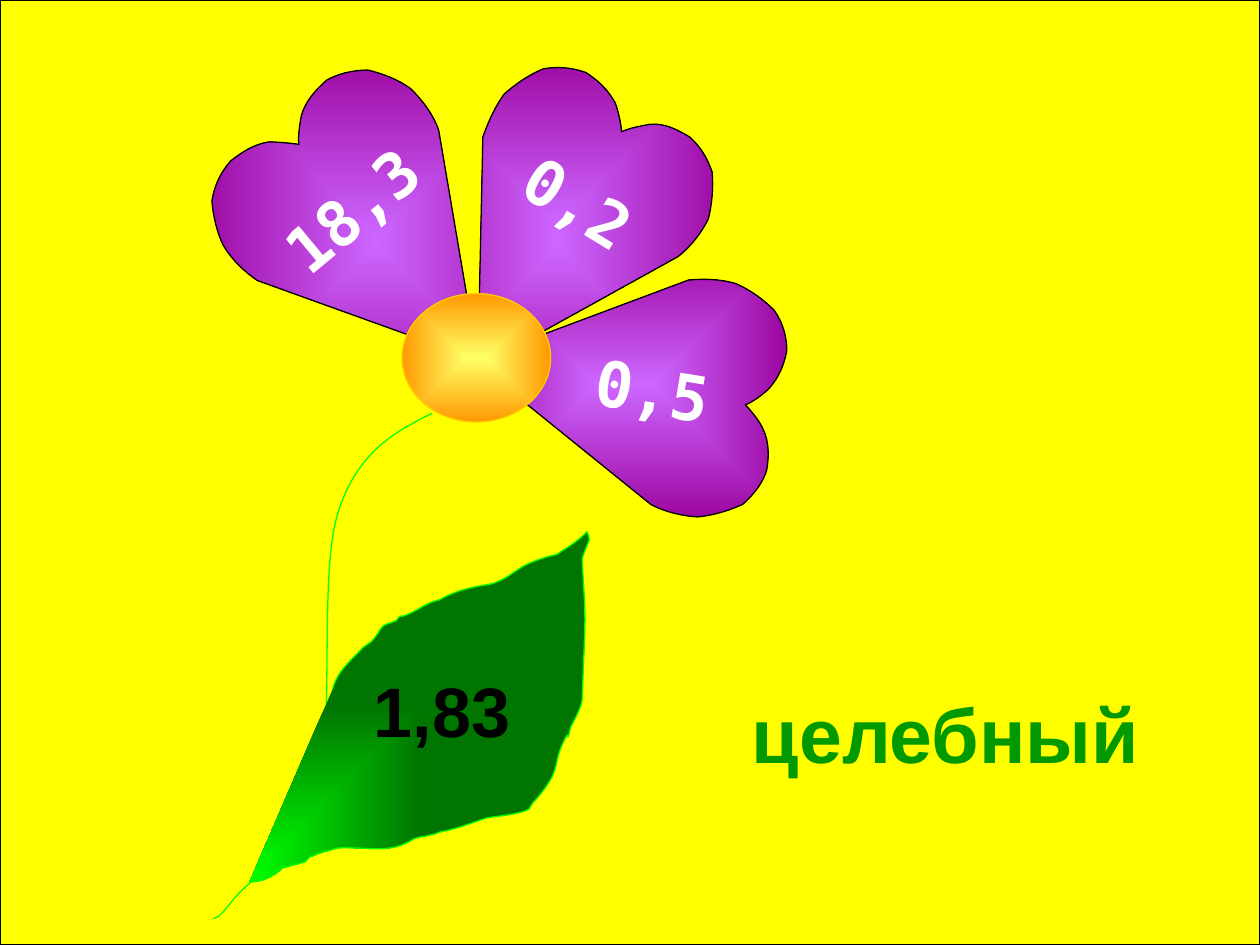
from dataclasses import dataclass
from math import cos, radians, sin
from typing import Optional

from lxml.etree import SubElement
from pptx import Presentation
from pptx.dml.color import RGBColor
from pptx.enum.shapes import MSO_SHAPE
from pptx.enum.text import MSO_ANCHOR, PP_ALIGN
from pptx.oxml.ns import qn
from pptx.util import Inches, Pt

COLS, ROWS = 1000, 750
W, H = Inches(10), Inches(7.5)
CELL = W // COLS

BLACK = RGBColor(0x00, 0x00, 0x00)
WHITE = RGBColor(0xFF, 0xFF, 0xFF)
YELLOW = RGBColor(0xFF, 0xFF, 0x00)
LIME = RGBColor(0x00, 0xFF, 0x00)
LEAF_GREEN = RGBColor(0x00, 0x76, 0x00)
WORD_GREEN = RGBColor(0x00, 0x99, 0x00)
LILAC = RGBColor(0xCC, 0x66, 0xFF)
PURPLE = RGBColor(0x99, 0x00, 0x99)
LEMON = RGBColor(0xFF, 0xFF, 0x66)
ORANGE = RGBColor(0xFF, 0x99, 0x00)
GOLD = RGBColor(0xFF, 0xCC, 0x00)

CENTRE = (50, 50, 50, 50)
BOTTOM_LEFT = (0, 100, 100, 0)


@dataclass(frozen=True)
class Outline:
    start: tuple
    segments: tuple
    closed: bool = False


@dataclass(frozen=True)
class Petal:
    text: str
    centre: tuple
    angle: float
    text_share: int
    outline: Outline
    vert: Optional[str] = None


STEM = Outline((343, 328), (
    (313, 343, 283, 359, 268, 408), (253, 458, 266, 574, 252, 625),
    (238, 676, 200, 696, 186, 713), (172, 731, 172, 728, 169, 729)))

LEAF = Outline((264, 547), (
    (268, 532, 278, 525, 288, 514), (290, 512, 293, 511, 295, 509),
    (305, 498, 299, 497, 314, 493), (322, 484, 312, 493, 325, 487),
    (336, 482, 337, 479, 349, 476), (359, 470, 370, 467, 381, 465),
    (386, 464, 390, 464, 394, 462), (402, 459, 409, 453, 416, 449),
    (424, 445, 433, 442, 442, 440), (451, 434, 458, 430, 466, 422),
    (469, 431, 468, 426, 464, 438), (463, 440, 462, 444, 462, 444),
    (465, 496, 465, 480, 462, 556), (461, 563, 453, 577, 453, 577),
    (448, 597, 455, 570, 445, 594), (442, 601, 442, 609, 438, 617),
    (434, 624, 429, 631, 423, 637), (422, 638, 421, 641, 420, 642),
    (415, 646, 393, 648, 387, 649), (374, 653, 363, 658, 350, 660),
    (346, 662, 341, 663, 336, 664), (333, 664, 328, 666, 328, 666),
    (310, 678, 294, 672, 268, 673), (255, 677, 260, 675, 251, 678),
    (250, 679, 246, 680, 246, 680), (240, 686, 245, 683, 235, 686),
    (231, 687, 224, 689, 224, 689), (217, 696, 208, 700, 198, 700)))

PETALS = (
    Petal("0,2", (442, 187), 31.4, 74, Outline((493, 105), (
        (493, 99, 490, 87, 488, 82), (482, 71, 474, 64, 465, 58),
        (454, 54, 443, 53, 431, 55), (419, 60, 409, 67, 400, 75),
        (392, 86, 387, 98, 383, 109), (379, 292), (538, 204),
        (548, 196, 556, 186, 562, 174), (565, 162, 566, 149, 565, 137),
        (561, 125, 555, 116, 547, 109), (537, 103, 527, 98, 516, 99),
        (510, 100, 499, 102, 493, 105)), True)),
    Petal("18,3", (300, 191.5), 320.2, 74, Outline((237, 115), (
        (231, 114, 219, 113, 213, 113), (201, 115, 192, 121, 183, 128),
        (175, 137, 170, 147, 168, 160), (169, 172, 172, 185, 177, 195),
        (184, 207, 194, 216, 204, 223), (379, 286), (348, 104),
        (344, 92, 336, 81, 326, 71), (317, 64, 304, 59, 292, 56),
        (279, 56, 268, 59, 259, 64), (250, 72, 242, 81, 239, 92),
        (238, 97, 236, 109, 237, 115)), True)),
    Petal("0,5", (496.5, 305.5), 99.4, 82, Outline((592, 321), (
        (598, 319, 607, 312, 611, 308), (619, 299, 623, 289, 625, 278),
        (625, 267, 622, 256, 615, 246), (606, 237, 596, 230, 585, 225),
        (572, 221, 559, 221, 547, 222), (376, 286), (517, 400),
        (528, 406, 541, 409, 554, 410), (566, 409, 579, 405, 590, 400),
        (599, 392, 606, 383, 609, 373), (611, 362, 611, 350, 606, 340),
        (604, 335, 597, 326, 592, 321)), True), "vert270"),
)


def cells(*values: float) -> list:
    return [round(v * CELL) for v in values]


def turn_back(x: float, y: float, centre: tuple, angle: float) -> tuple:
    a, dx, dy = radians(angle), x - centre[0], y - centre[1]
    return (centre[0] + dx * cos(a) + dy * sin(a),
            centre[1] - dx * sin(a) + dy * cos(a))


def style(sp, line: RGBColor) -> None:
    sp.shadow.inherit = False
    sp.line.color.rgb = line
    sp.line.width = Pt(0.75)


def fill_gradient(sp, inner: RGBColor, outer: RGBColor, kind: str, focus: tuple) -> None:
    sp.fill.gradient()
    for stop, color, position in zip(sp.fill.gradient_stops, (inner, outer), (0, 1)):
        stop.color.rgb = color
        stop.position = position
    grad = sp.element.spPr.find(qn("a:gradFill"))
    grad.set("rotWithShape", "0")
    grad.remove(grad.find(qn("a:lin")))
    path = SubElement(grad, qn("a:path"), {"path": kind})
    SubElement(path, qn("a:fillToRect"),
               {side: str(share * 1000) for side, share in zip("ltrb", focus)})


def draw_outline(s, outline: Outline, line: RGBColor, centre: tuple = (0, 0),
                 angle: float = 0):
    points = [outline.start]
    for seg in outline.segments:
        points += zip(seg[::2], seg[1::2])
    first, *rest = [cells(*turn_back(x, y, centre, angle)) for x, y in points]
    builder = s.shapes.build_freeform(*first, scale=1.0)
    builder.add_line_segments(rest, close=outline.closed)
    sp = builder.convert_to_shape()
    path = next(sp.element.iter(qn("a:path")))
    steps = iter(path.findall(qn("a:lnTo")))
    for seg in outline.segments:
        step = next(steps)
        if len(seg) == 6:
            curve = SubElement(path, qn("a:cubicBezTo"))
            step.addprevious(curve)
            for part in (step, next(steps), next(steps)):
                curve.append(part[0])
                path.remove(part)
    sp.rotation = angle
    style(sp, line)
    return sp


def write(tf, text: str, font: str, size: int, color: RGBColor,
          align: PP_ALIGN = PP_ALIGN.LEFT) -> None:
    p = tf.paragraphs[0]
    p.text = text
    p.alignment = align
    p.font.name, p.font.size, p.font.bold = font, Pt(size), True
    p.font.color.rgb = color


def add_label(s, box: tuple, text: str, size: int, color: RGBColor) -> None:
    tf = s.shapes.add_textbox(*cells(*box)).text_frame
    tf.word_wrap = True
    write(tf, text, "Arial", size, color)


def draw_petal(s, petal: Petal) -> None:
    sp = draw_outline(s, petal.outline, BLACK, petal.centre, petal.angle)
    fill_gradient(sp, LILAC, PURPLE, "shape", CENTRE)
    geom = sp.element.spPr.find(qn("a:custGeom"))
    SubElement(geom.find(qn("a:gdLst")), qn("a:gd"),
               {"name": "textBottom", "fmla": f"*/ h {petal.text_share} 100"})
    geom.find(qn("a:rect")).set("b", "textBottom")
    tf = sp.text_frame
    tf.word_wrap = False
    tf.vertical_anchor = MSO_ANCHOR.MIDDLE
    write(tf, petal.text, "DejaVu Sans Mono", 36, WHITE, PP_ALIGN.CENTER)
    if petal.vert:
        sp.element.txBody.find(qn("a:bodyPr")).set("vert", petal.vert)


def main() -> None:
    prs = Presentation()
    prs.slide_width, prs.slide_height = W, H
    s = prs.slides.add_slide(prs.slide_layouts[6])

    field = s.shapes.add_shape(MSO_SHAPE.RECTANGLE, *cells(0, 0, COLS, ROWS))
    field.fill.solid()
    field.fill.fore_color.rgb = YELLOW
    style(field, BLACK)

    draw_outline(s, STEM, LIME).fill.background()
    leaf = draw_outline(s, LEAF, LIME)
    fill_gradient(leaf, LIME, LEAF_GREEN, "rect", BOTTOM_LEFT)
    add_label(s, (287, 525, 157, 77), "1,83", 40, BLACK)

    for petal in PETALS:
        draw_petal(s, petal)
    core = s.shapes.add_shape(MSO_SHAPE.OVAL, *cells(319, 233, 118, 102))
    fill_gradient(core, LEMON, ORANGE, "shape", CENTRE)
    style(core, GOLD)

    add_label(s, (587, 540, 370, 83), "целебный", 44, WORD_GREEN)
    prs.save("out.pptx")


if __name__ == "__main__":
    main()
